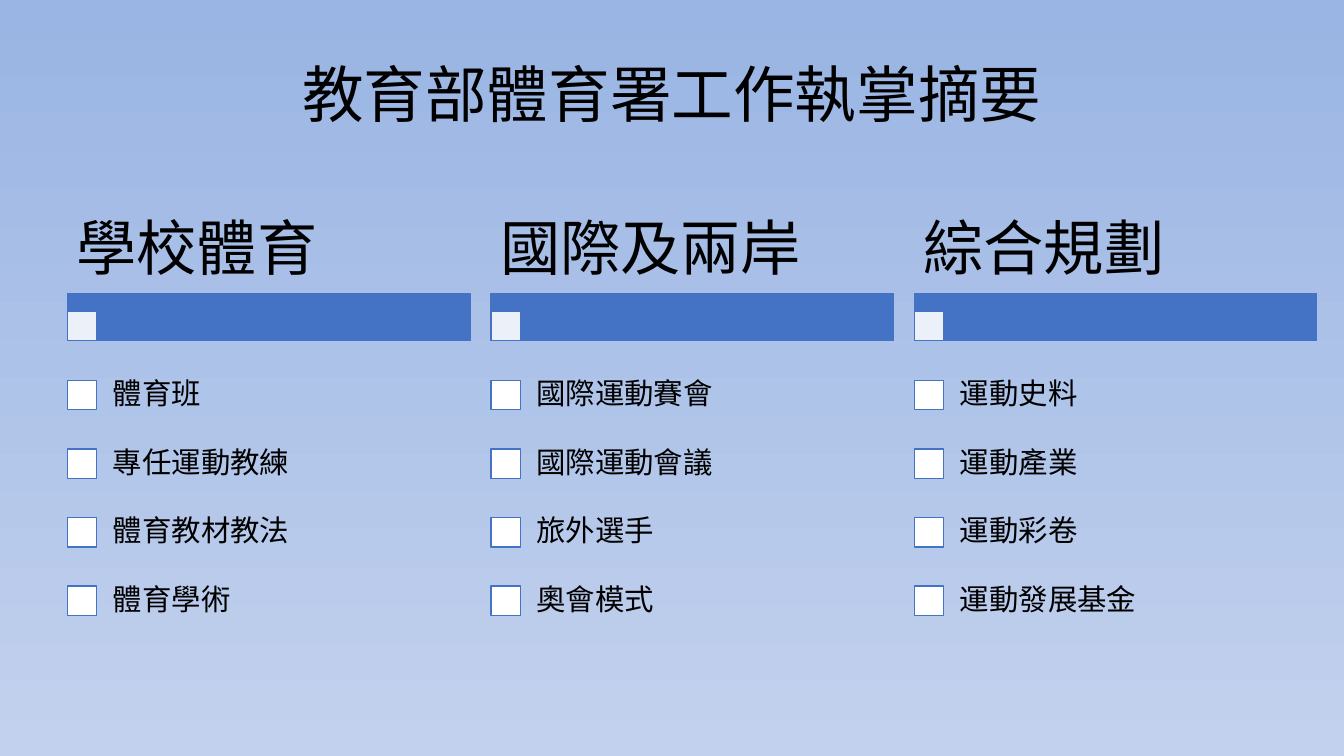
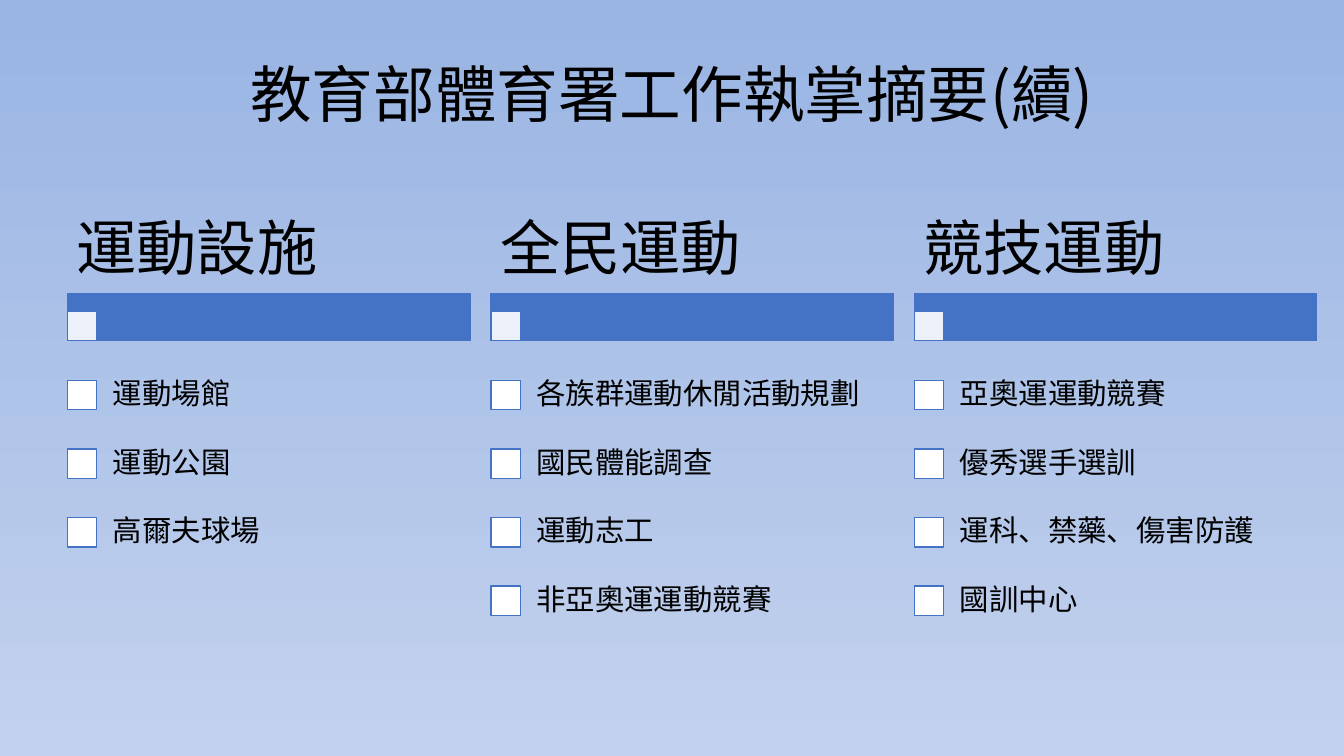
"""Build two slides that list the duties of the sports administration in three columns."""
from lxml.etree import SubElement
from pptx import Presentation
from pptx.dml.color import RGBColor
from pptx.enum.shapes import MSO_SHAPE
from pptx.enum.text import MSO_ANCHOR, PP_ALIGN
from pptx.oxml.ns import qn
from pptx.util import Inches, Pt

SKY_TOP = RGBColor(0x9A, 0xB5, 0xE4)
SKY_BOTTOM = RGBColor(0xC2, 0xD1, 0xED)
BLUE = RGBColor(0x44, 0x72, 0xC4)
WHITE = RGBColor(0xFF, 0xFF, 0xFF)
BLACK = RGBColor(0, 0, 0)
SANS = "Noto Sans CJK SC"
SERIF = "Times New Roman"

SLIDE_WIDTH, SLIDE_HEIGHT = 13.33, 7.5
MARGIN = 0.67
COLUMN_WIDTH, COLUMN_GAP = 3.99, 0.21
HEADING_TOP, HEADING_HEIGHT = 2.07, 0.84
BAR_TOP, BAR_HEIGHT = HEADING_TOP + HEADING_HEIGHT, 0.47
LIST_TOP, ROW_HEIGHT = 3.58, 0.68
BOX_SIZE = 0.29

SLIDES = [
    ("教育部體育署工作執掌摘要", [
        ("學校體育", SERIF, SERIF, ["體育班", "專任運動教練", "體育教材教法", "體育學術"]),
        ("國際及兩岸", SANS, SANS, ["國際運動賽會", "國際運動會議", "旅外選手", "奧會模式"]),
        ("綜合規劃", SERIF, SERIF, ["運動史料", "運動產業", "運動彩卷", "運動發展基金"]),
    ]),
    ("教育部體育署工作執掌摘要(續)", [
        ("運動設施", SANS, SANS, ["運動場館", "運動公園", "高爾夫球場"]),
        ("全民運動", SERIF, SERIF,
         ["各族群運動休閒活動規劃", "國民體能調查", "運動志工", "非亞奧運運動競賽"]),
        ("競技運動", SERIF, SANS,
         ["亞奧運運動競賽", "優秀選手選訓", "運科、禁藥、傷害防護", "國訓中心"]),
    ]),
]


def set_background(master):
    """Give the slide master a gradient that runs from top to bottom."""
    fill = master.background.fill
    fill.gradient()
    fill.gradient_angle = 270
    for stop, color in zip(fill.gradient_stops, (SKY_TOP, SKY_BOTTOM)):
        stop.color.rgb = color


def add_text(slide, text, left, top, width, height, size, font_name,
             insets=(0.1, 0.05), align=PP_ALIGN.LEFT, line_spacing=0.9):
    """Add one line of text, centred vertically in its box."""
    shape = slide.shapes.add_textbox(*map(Inches, (left, top, width, height)))
    frame = shape.text_frame
    frame.word_wrap = True
    frame.vertical_anchor = MSO_ANCHOR.MIDDLE
    frame.margin_left = frame.margin_right = Inches(insets[0])
    frame.margin_top = frame.margin_bottom = Inches(insets[1])
    paragraph = frame.paragraphs[0]
    paragraph.text = text
    paragraph.alignment = align
    paragraph.line_spacing = line_spacing
    font = paragraph.font
    font.size = Pt(size)
    font.color.rgb = BLACK
    font.name = font_name
    properties = paragraph._p.pPr.find(qn("a:defRPr"))
    SubElement(properties, qn("a:ea")).set("typeface", SANS)


def add_rectangle(slide, left, top, width, height, color, opacity=100):
    """Add a rectangle with a thin blue outline."""
    shape = slide.shapes.add_shape(
        MSO_SHAPE.RECTANGLE, *map(Inches, (left, top, width, height)))
    shape.shadow.inherit = False
    shape.fill.solid()
    shape.fill.fore_color.rgb = color
    shape.line.color.rgb = BLUE
    shape.line.width = Pt(1)
    if opacity < 100:
        color_element = shape._element.spPr.find(qn("a:solidFill"))[0]
        SubElement(color_element, qn("a:alpha")).set("val", str(opacity * 1000))


def add_column(slide, left, heading, heading_font, item_font, items):
    """Add a heading, its bar and a checklist below."""
    add_rectangle(slide, left, BAR_TOP, COLUMN_WIDTH, BAR_HEIGHT, BLUE)
    add_rectangle(slide, left, BAR_TOP + BAR_HEIGHT - BOX_SIZE,
                  BOX_SIZE, BOX_SIZE, WHITE, opacity=90)
    add_text(slide, heading, left, HEADING_TOP, COLUMN_WIDTH, HEADING_HEIGHT,
             43, heading_font, insets=(0.09, 0.06))
    for row, item in enumerate(items):
        top = LIST_TOP + row * ROW_HEIGHT
        add_rectangle(slide, left, top + (ROW_HEIGHT - BOX_SIZE) / 2,
                      BOX_SIZE, BOX_SIZE, WHITE)
        add_text(slide, item, left + BOX_SIZE, top, COLUMN_WIDTH - BOX_SIZE,
                 ROW_HEIGHT, 21, item_font, insets=(0.16, 0.16))


def add_duties_slide(presentation, title, columns):
    """Add a slide with a centred title and its columns."""
    slide = presentation.slides.add_slide(presentation.slide_layouts[6])
    add_text(slide, title, MARGIN, 0.3, SLIDE_WIDTH - 2 * MARGIN, 1.25, 44, SANS,
             align=PP_ALIGN.CENTER, line_spacing=1)
    for index, column in enumerate(columns):
        add_column(slide, MARGIN + index * (COLUMN_WIDTH + COLUMN_GAP), *column)


def main():
    """Build and save the presentation."""
    presentation = Presentation()
    presentation.slide_width = Inches(SLIDE_WIDTH)
    presentation.slide_height = Inches(SLIDE_HEIGHT)
    set_background(presentation.slide_master)
    for title, columns in SLIDES:
        add_duties_slide(presentation, title, columns)
    presentation.save("out.pptx")


if __name__ == "__main__":
    main()
